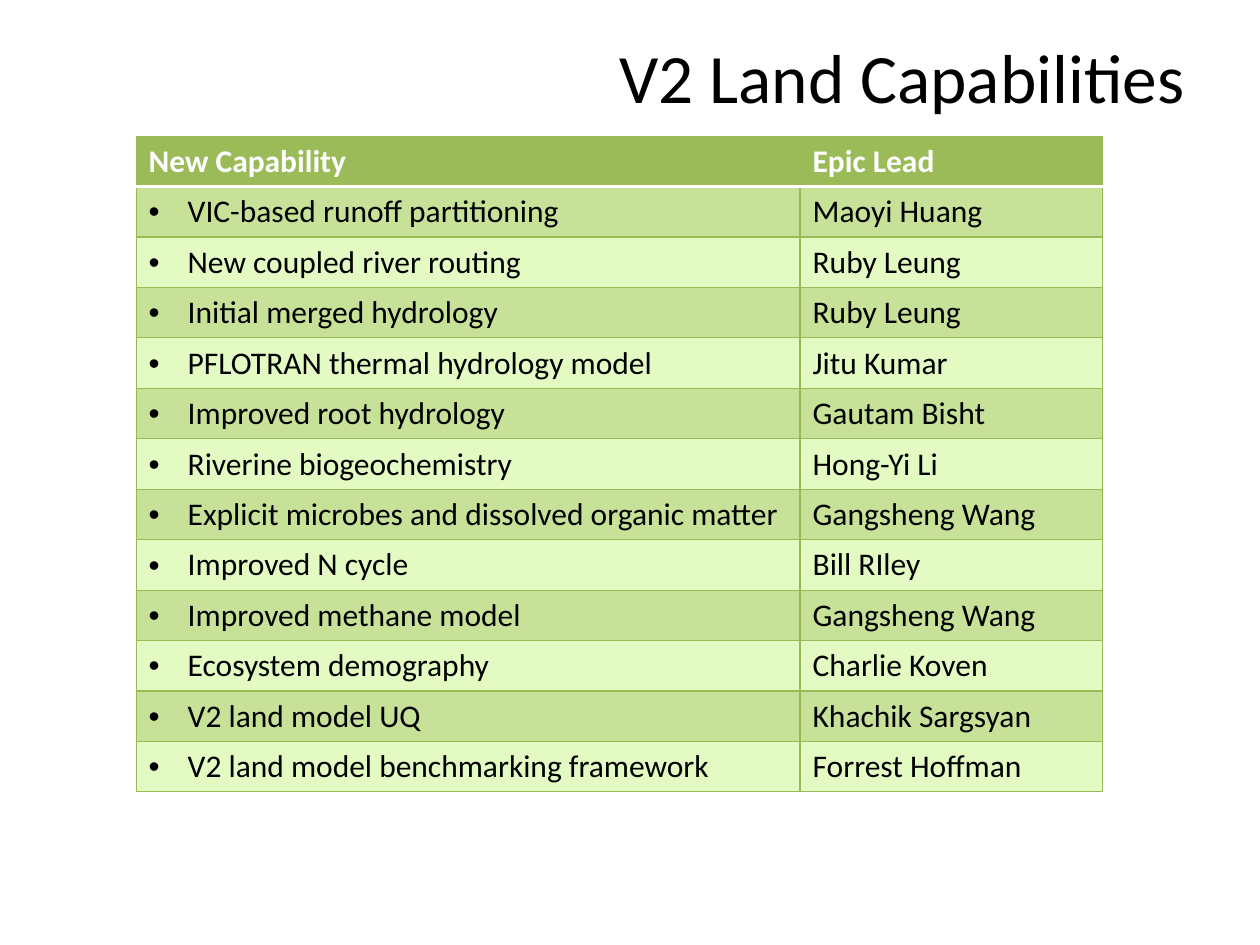
"""Build the V2 Land Capabilities slide with its table of epic leads."""
from lxml import etree
from pptx import Presentation
from pptx import util as u
from pptx.dml.color import RGBColor
from pptx.enum import text
from pptx.oxml import ns

BLACK = RGBColor(0x00, 0x00, 0x00)
WHITE = RGBColor(0xFF, 0xFF, 0xFF)
HEADER_GREEN = RGBColor(0x9B, 0xBB, 0x59)
BORDER_GREEN = RGBColor(0x98, 0xB9, 0x55)
DARK_BAND = RGBColor(0xC7, 0xE2, 0x98)
LIGHT_BAND = RGBColor(0xE3, 0xFA, 0xC3)
FONT = "Calibri"
ROW_HEIGHT = u.Inches(0.4)
COLUMN_WIDTHS = [u.Inches(5.27), u.Inches(2.4)]
BULLET_INDENT = u.Inches(0.31)

ROWS = [
    ("New Capability", "Epic Lead"),
    ("VIC-based runoff partitioning", "Maoyi Huang"),
    ("New coupled river routing", "Ruby Leung"),
    ("Initial merged hydrology", "Ruby Leung"),
    ("PFLOTRAN thermal hydrology model", "Jitu Kumar"),
    ("Improved root hydrology", "Gautam Bisht"),
    ("Riverine biogeochemistry", "Hong-Yi Li"),
    ("Explicit microbes and dissolved organic matter", "Gangsheng Wang"),
    ("Improved N cycle", "Bill RIley"),
    ("Improved methane model", "Gangsheng Wang"),
    ("Ecosystem demography", "Charlie Koven"),
    ("V2 land model UQ", "Khachik Sargsyan"),
    ("V2 land model benchmarking framework", "Forrest Hoffman"),
]


def add_border(cell, side, color, points):
    properties = cell._tc.get_or_add_tcPr()
    line = etree.SubElement(properties, ns.qn(f"a:{side}"), w=str(u.Pt(points)))
    fill = etree.SubElement(line, ns.qn("a:solidFill"))
    etree.SubElement(fill, ns.qn("a:srgbClr"), val=str(color))


def add_bullet(paragraph):
    properties = paragraph._p.get_or_add_pPr()
    properties.set("marL", str(BULLET_INDENT))
    properties.set("indent", str(-BULLET_INDENT))
    etree.SubElement(properties, ns.qn("a:buFont"), typeface="Arial")
    etree.SubElement(properties, ns.qn("a:buChar"), char="•")


presentation = Presentation()
presentation.slide_width = u.Inches(10)
presentation.slide_height = u.Inches(7.5)
slide = presentation.slides.add_slide(presentation.slide_layouts[6])

title = slide.shapes.add_textbox(u.Inches(0.5), u.Inches(0.3), u.Inches(9), u.Inches(0.6))
title.text_frame.word_wrap = True
title.text_frame.vertical_anchor = text.MSO_ANCHOR.MIDDLE
paragraph = title.text_frame.paragraphs[0]
paragraph.text = "V2 Land Capabilities"
paragraph.alignment = text.PP_ALIGN.RIGHT
paragraph.font.name = FONT
paragraph.font.size = u.Pt(39.6)
paragraph.font.color.rgb = BLACK

table = slide.shapes.add_table(
    len(ROWS), len(COLUMN_WIDTHS), u.Inches(1.08), u.Inches(1.08),
    sum(COLUMN_WIDTHS), ROW_HEIGHT * len(ROWS),
).table
table.horz_banding = False
for column, width in zip(table.columns, COLUMN_WIDTHS):
    column.width = width

for row_index, row in enumerate(ROWS):
    table.rows[row_index].height = ROW_HEIGHT
    is_header = row_index == 0
    band = DARK_BAND if row_index % 2 else LIGHT_BAND
    for column_index, label in enumerate(row):
        cell = table.cell(row_index, column_index)
        white_side = {0: "lnB", 1: "lnT"}.get(row_index)
        for side in ("lnL", "lnR", "lnT", "lnB"):
            if side == white_side:
                add_border(cell, side, WHITE, 2)
            else:
                add_border(cell, side, BORDER_GREEN, 0.75)
        cell.fill.solid()
        cell.fill.fore_color.rgb = HEADER_GREEN if is_header else band
        paragraph = cell.text_frame.paragraphs[0]
        paragraph.text = label
        if column_index == 0 and not is_header:
            add_bullet(paragraph)
        paragraph.font.name = FONT
        paragraph.font.size = u.Pt(18)
        paragraph.font.bold = is_header
        paragraph.font.color.rgb = WHITE if is_header else BLACK

presentation.save("out.pptx")
